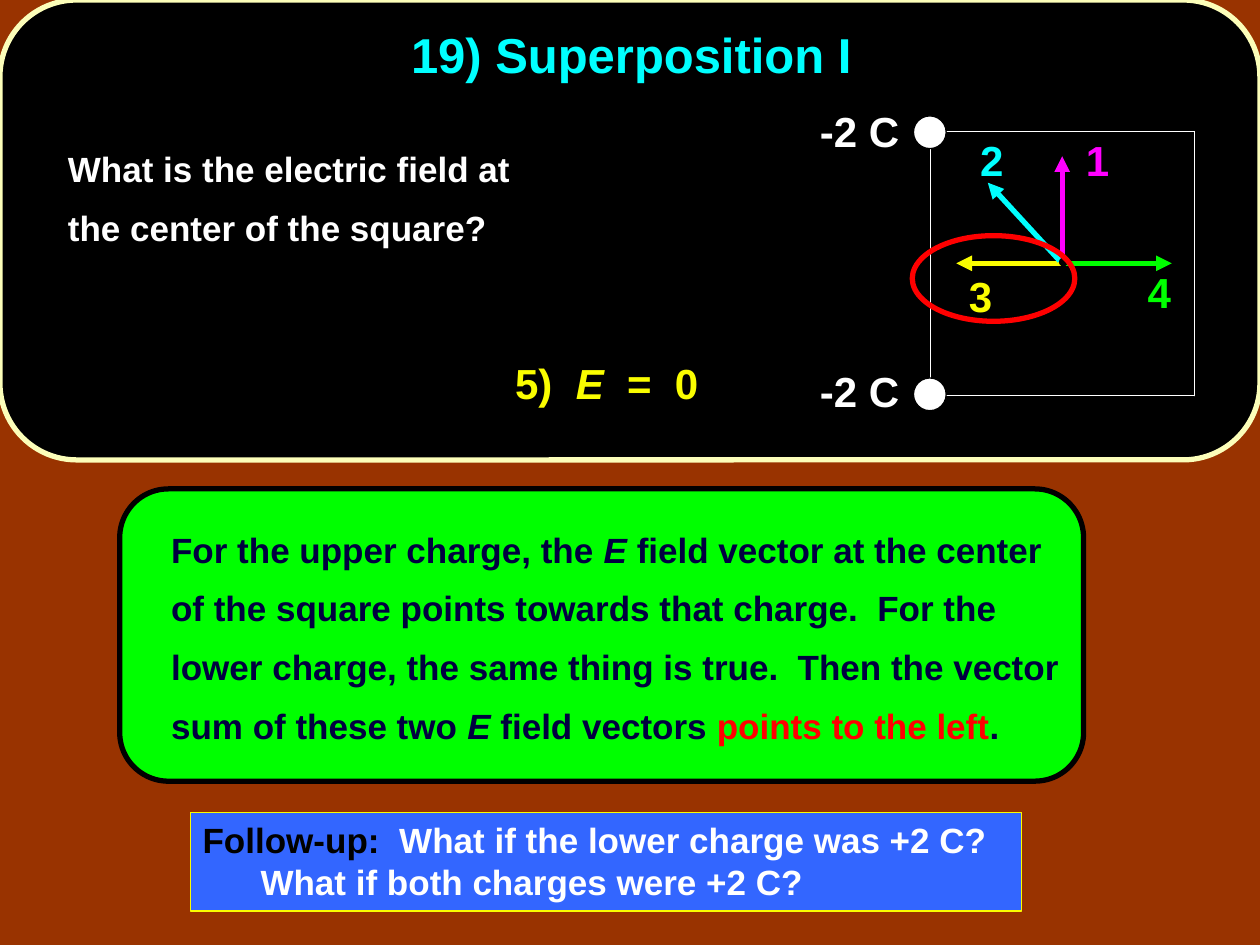
import pptx
import pptx.dml.color
import pptx.enum.dml
import pptx.enum.shapes
import pptx.enum.text
import pptx.oxml
import pptx.oxml.ns
import pptx.util

Inches = pptx.util.Inches
Pt = pptx.util.Pt
Shape = pptx.enum.shapes.MSO_SHAPE
Align = pptx.enum.text.PP_ALIGN
Anchor = pptx.enum.text.MSO_ANCHOR

BLACK, WHITE, YELLOW = "000000", "FFFFFF", "FAFD00"
CYAN, GREEN, PINK, RED = "00FFFF", "00FF00", "FF00FF", "FF0000"


def rgb(code):
    return pptx.dml.color.RGBColor.from_string(code)


def add(parent, tag, **attrs):
    """Append a drawing element to an XML parent."""
    node = pptx.oxml.parse_xml(f"<a:{tag} {pptx.oxml.ns.nsdecls('a')}/>")
    for key, value in attrs.items():
        node.set(key, value)
    parent.append(node)


def write(frame, parts, size=24, color=WHITE, align=Align.LEFT, anchor=Anchor.TOP,
          lead=0.9, before=0, left=0, hang=0, wrap=True):
    """Fill a frame with one paragraph; a part is text or (text, colour, italic)."""
    frame.word_wrap = wrap
    frame.vertical_anchor = anchor
    para = frame.paragraphs[0]
    para.alignment = align
    para.line_spacing = lead
    para.space_before = Pt(before)
    props = para._p.get_or_add_pPr()
    props.set("marL", str(Inches(left)))
    props.set("indent", str(Inches(-hang)))
    for part in [parts] if isinstance(parts, str) else parts:
        text, tint, slant = (part, color, False) if isinstance(part, str) else part
        run = para.add_run()
        run.text = text
        font = run.font
        font.name, font.size, font.bold, font.italic = "Arial", Pt(size), True, slant
        font.color.rgb = rgb(tint)


class Deck:
    def __init__(self, back):
        self.prs = pptx.Presentation()
        self.prs.slide_width, self.prs.slide_height = Inches(10), Inches(7.5)
        self.slide = self.prs.slides.add_slide(self.prs.slide_layouts[5])
        self.shapes = self.slide.shapes
        fill = self.slide.background.fill
        fill.solid()
        fill.fore_color.rgb = rgb(back)

    def title(self, text, x, y, w, h, **style):
        """Place the title above the shapes drawn so far."""
        box = self.shapes.title
        box.left, box.top, box.width, box.height = map(Inches, (x, y, w, h))
        write(box.text_frame, text, align=Align.CENTER, anchor=Anchor.MIDDLE, **style)
        self.shapes._spTree.append(box._element)

    def shape(self, kind, x, y, w, h, fill=None, line=BLACK, width=3, dash=None):
        item = self.shapes.add_shape(kind, *map(Inches, (x, y, w, h)))
        item.shadow.inherit = False
        if fill:
            item.fill.solid()
            item.fill.fore_color.rgb = rgb(fill)
        else:
            item.fill.background()
        item.line.color.rgb = rgb(line)
        item.line.width = Pt(width)
        if dash:
            item.line.dash_style = dash
        return item

    def label(self, parts, x, y, w, h, **style):
        box = self.shapes.add_textbox(*map(Inches, (x, y, w, h)))
        write(box.text_frame, parts, **style)

    def arrow(self, x1, y1, x2, y2, color):
        line = self.shapes.add_connector(pptx.enum.shapes.MSO_CONNECTOR.STRAIGHT,
                                         *map(Inches, (x1, y1, x2, y2)))
        line.line.color.rgb = rgb(color)
        line.line.width = Pt(3)
        add(line.line._get_or_add_ln(), "tailEnd", type="triangle")
        add(line._element.spPr, "effectLst")


def main():
    deck = Deck("993300")
    deck.shape(Shape.ROUNDED_RECTANGLE, 0, 0, 10, 3.65, BLACK, "FCFEB9")
    deck.shape(Shape.ROUNDED_RECTANGLE, 0.95, 3.88, 7.65, 2.32, GREEN)
    deck.title("19) Superposition I", 1.02, 0, 7.98, 0.92, size=28, color=CYAN)

    deck.label("What is the electric field at the center of the square?",
               0, 0.99, 4.21, 1.95, size=20, lead=1.4, before=10, left=0.44)

    navy = "000040"
    field = ("E", navy, True)
    deck.label(["For the upper charge, the ", field,
                " field vector at the center of the square points towards that charge.  "
                "For the lower charge, the same thing is true.  "
                "Then the vector sum of these two ", field, " field vectors ",
                ("points to the left", RED, False), "."],
               0.95, 4.01, 7.7, 1.97, size=20, color=navy, lead=1.4, before=10, left=0.31)

    # Square with the candidate field vectors at its center
    deck.shape(Shape.RECTANGLE, 7.38, 1.04, 2.1, 2.1, line=WHITE, width=0.25,
               dash=pptx.enum.dml.MSO_LINE.ROUND_DOT)
    vectors = [
        ("4", GREEN, (8.45, 2.09, 9.3, 2.09), (9.01, 2.11)),
        ("3", YELLOW, (8.43, 2.09, 7.59, 2.09), (7.59, 2.14)),
        ("1", PINK, (8.43, 2.09, 8.43, 1.24), (8.52, 1.06)),
        ("2", CYAN, (8.41, 2.07, 7.84, 1.45), (7.68, 1.06)),
    ]
    for name, color, ends, spot in vectors:
        deck.arrow(*ends, color)
        deck.label(name, *spot, 0.39, 0.46, color=color, wrap=False)
    deck.shape(Shape.OVAL, 8.41, 2.05, 0.06, 0.06, BLACK, width=0.75)

    for dot, top in ((0.92, 0.83), (3, 2.9)):
        deck.shape(Shape.OVAL, 7.25, dot, 0.26, 0.26, WHITE, width=0.75)
        deck.label("-2 C", 6.41, top, 0.83, 0.46, wrap=False)

    deck.label(["5)  ", ("E", YELLOW, True), "  =  0"],
               3.99, 2.83, 1.8, 0.46, color=YELLOW, wrap=True)
    deck.shape(Shape.OVAL, 7.24, 1.87, 1.29, 0.68, line=RED)

    follow = deck.shape(Shape.RECTANGLE, 1.51, 6.45, 6.6, 0.78, "3366FF", YELLOW, 0.75)
    write(follow.text_frame,
          [("Follow-up:", BLACK, False),
           "  What if the lower charge was +2 C? What if both charges were +2 C?"],
          size=20, lead=1.0, left=0.46, hang=0.46)

    deck.prs.save("out.pptx")


if __name__ == "__main__":
    main()
